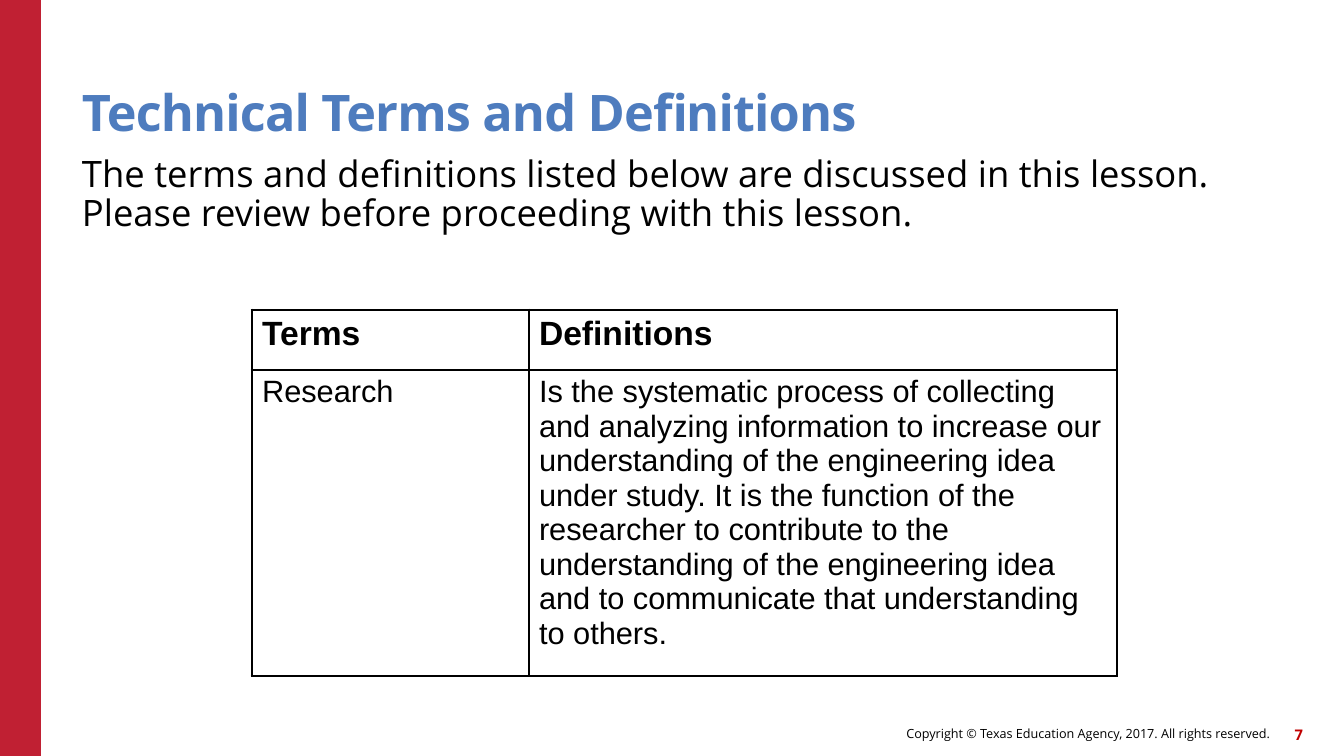
from dataclasses import dataclass

from lxml import etree
from pptx import Presentation
from pptx import util as u
from pptx.dml.color import RGBColor
from pptx.enum import shapes, text
from pptx.oxml.ns import qn

EMU_PER_PX = 914400 / 100.8


@dataclass(frozen=True)
class Theme:
    red: str = "C02033"
    blue: str = "4E7CBE"
    black: str = "000000"
    number_red: str = "C00000"
    heading_font: str = "Open Sans"
    table_font: str = "Arial"
    title_size: float = 36
    body_size: float = 26
    header_size: float = 24
    cell_size: float = 22
    footer_size: float = 9
    number_size: float = 10.5
    outer_line: float = 2.25
    inner_line: float = 1


THEME = Theme()

TERMS = [
    ("Terms", "Definitions"),
    ("Research",
     "Is the systematic process of collecting and analyzing information to "
     "increase our understanding of the engineering idea under study. It is "
     "the function of the researcher to contribute to the understanding of "
     "the engineering idea and to communicate that understanding to others."),
]


def px(length):
    return u.Emu(round(length * EMU_PER_PX))


def set_all(target, values):
    for name, value in values.items():
        setattr(target, name, value)


def place(shape, box):
    set_all(shape, dict(zip(("left", "top", "width", "height"), map(px, box))))


def write(frame, content, size, color, font=THEME.heading_font, bold=False,
          **paragraph_format):
    """Fill a text frame with one formatted paragraph."""
    frame.word_wrap = True
    paragraph = frame.paragraphs[0]
    paragraph.text = content
    set_all(paragraph, {"space_before": u.Pt(0), **paragraph_format})
    run_font = paragraph.runs[0].font
    set_all(run_font, {"name": font, "size": u.Pt(size), "bold": bold})
    run_font.color.rgb = RGBColor.from_string(color)
    return paragraph


def set_frame(frame, anchor):
    set_all(frame, {
        "margin_left": 0, "margin_top": 0, "margin_right": 0,
        "margin_bottom": 0, "vertical_anchor": anchor,
        "auto_size": text.MSO_AUTO_SIZE.NONE,
    })


def add_bar(slide, box, color):
    bar = slide.shapes.add_shape(shapes.MSO_SHAPE.RECTANGLE, *map(px, box))
    bar.shadow.inherit = False
    bar.fill.solid()
    bar.fill.fore_color.rgb = RGBColor.from_string(color)
    bar.line.fill.background()


def add_footer(slide, box, content, size, color, bold=False):
    frame = slide.shapes.add_textbox(*map(px, box)).text_frame
    set_frame(frame, text.MSO_ANCHOR.MIDDLE)
    write(frame, content, size, color, bold=bold,
          alignment=text.PP_ALIGN.RIGHT)


def fill_placeholder(placeholder, box, content, size, color, anchor,
                     bold=False):
    place(placeholder, box)
    set_frame(placeholder.text_frame, anchor)
    return write(placeholder.text_frame, content, size, color, bold=bold,
                 alignment=text.PP_ALIGN.LEFT, line_spacing=0.9)


def remove_bullet(paragraph):
    properties = paragraph._p.get_or_add_pPr()
    properties.set("marL", "0")
    properties.set("indent", "0")
    etree.SubElement(properties, qn("a:buNone"))


def set_borders(cell, widths):
    properties = cell._tc.get_or_add_tcPr()
    for side in "LRTB":
        line = etree.SubElement(properties, qn(f"a:ln{side}"),
                                w=str(u.Pt(widths[side])))
        fill = etree.SubElement(line, qn("a:solidFill"))
        etree.SubElement(fill, qn("a:srgbClr"), val=THEME.black)


def add_terms_table(slide, left, top, columns, rows):
    table = slide.shapes.add_table(
        len(rows), len(columns), px(left), px(top),
        px(sum(columns)), px(sum(rows))).table
    set_all(table, {"first_row": False, "horz_banding": False})
    for column, width in zip(table.columns, columns):
        column.width = px(width)
    for row, height in zip(table.rows, rows):
        row.height = px(height)

    outer, inner = THEME.outer_line, THEME.inner_line
    last_column = len(columns) - 1
    for r, entries in enumerate(TERMS):
        header = r == 0
        for c, content in enumerate(entries):
            cell = table.cell(r, c)
            write(cell.text_frame, content,
                  THEME.header_size if header else THEME.cell_size,
                  THEME.black, THEME.table_font, bold=header)
            # Heavy lines on the left, top and right of the table
            set_borders(cell, {
                "L": outer if c == 0 else inner,
                "R": outer if c == last_column else inner,
                "T": outer if header else inner,
                "B": inner,
            })
            cell.fill.background()


def main():
    presentation = Presentation()
    set_all(presentation, {"slide_width": px(1344), "slide_height": px(756)})
    slide = presentation.slides.add_slide(presentation.slide_layouts[1])

    # Side bar and footer
    add_bar(slide, (0, 0, 41, 756), THEME.red)
    add_footer(slide, (619, 718, 651, 32),
               "Copyright © Texas Education Agency, 2017. All rights reserved.",
               THEME.footer_size, THEME.black)
    add_footer(slide, (1261, 719, 42, 32), "7", THEME.number_size,
               THEME.number_red, bold=True)

    # Title and introduction
    title = fill_placeholder(
        slide.shapes.title, (82, 45, 1109, 97),
        "Technical Terms and Definitions", THEME.title_size, THEME.blue,
        text.MSO_ANCHOR.BOTTOM, bold=True)
    title.runs[0].font._element.set("spc", "-60")
    introduction = fill_placeholder(
        slide.placeholders[1], (82, 156, 1219, 121),
        "The terms and definitions listed below are discussed in this lesson. "
        "Please review before proceeding with this lesson.",
        THEME.body_size, THEME.black, text.MSO_ANCHOR.TOP)
    remove_bullet(introduction)

    # Terms and their definitions
    add_terms_table(slide, 252, 310, columns=(277, 588), rows=(60, 306))

    presentation.save("out.pptx")


if __name__ == "__main__":
    main()
